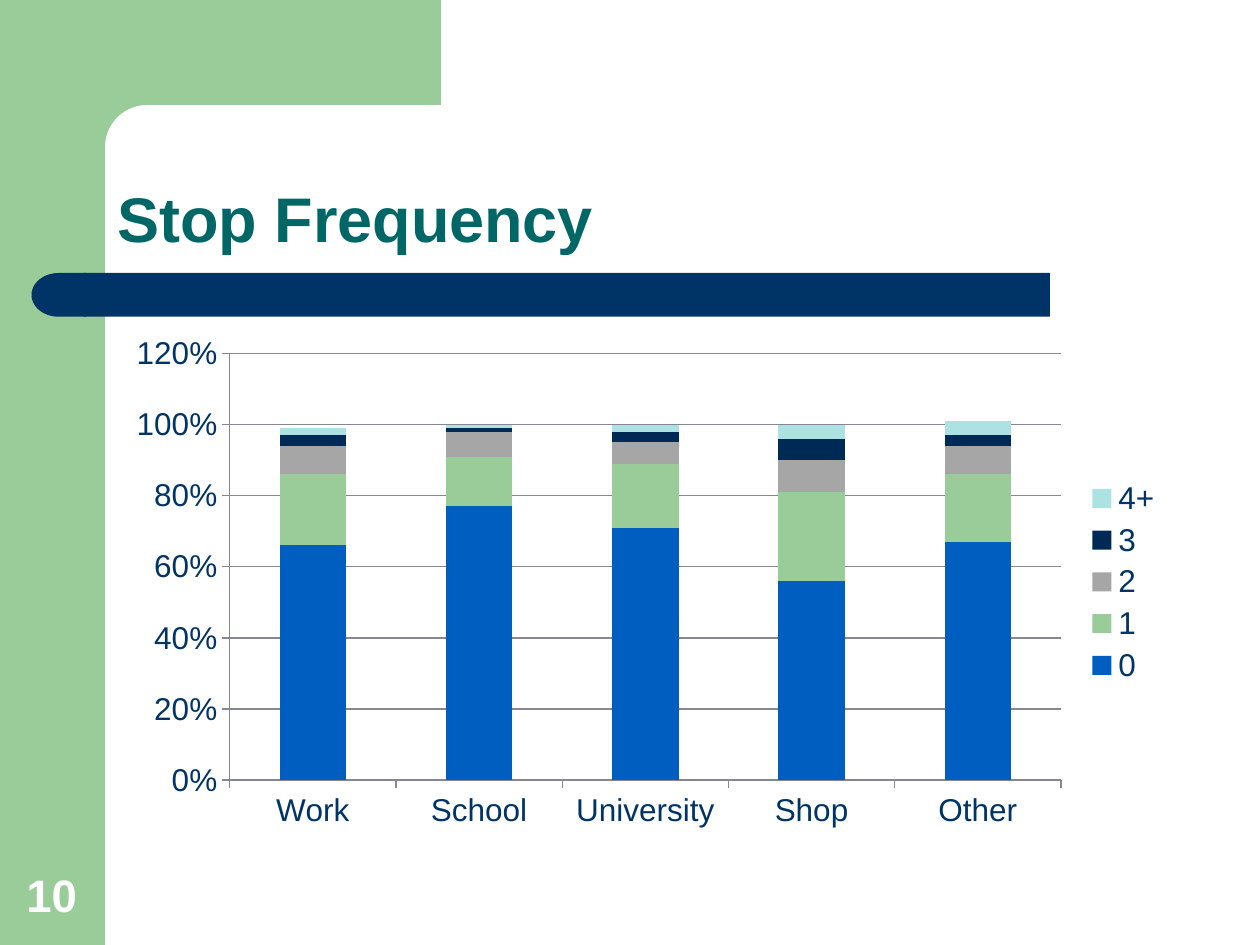
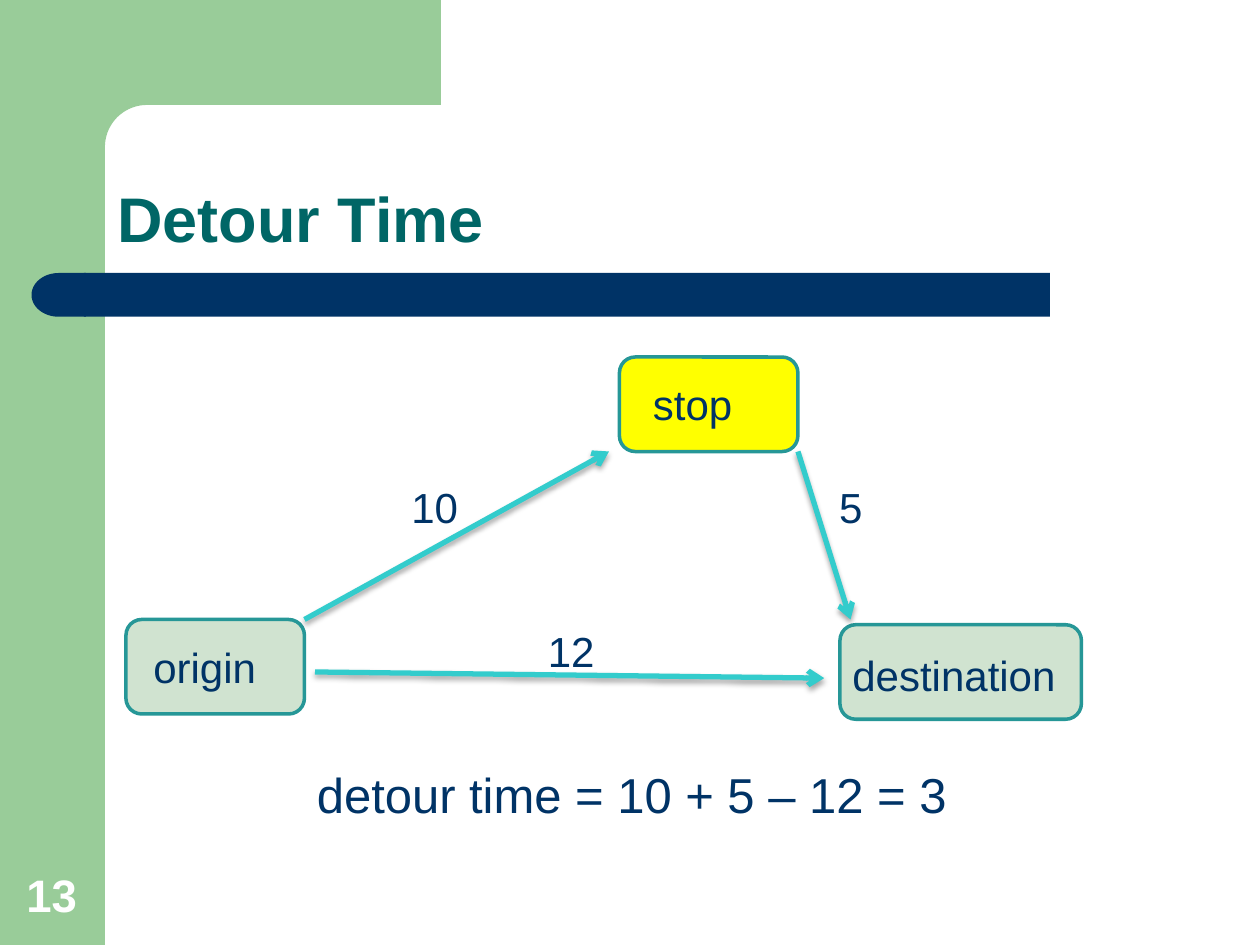
import math

import pptx
import pptx.chart.data
import pptx.dml.color
import pptx.enum.chart
import pptx.enum.shapes
import pptx.enum.text
import pptx.oxml
import pptx.oxml.ns
import pptx.util

Pt = pptx.util.Pt
SHAPE = pptx.enum.shapes.MSO_SHAPE
ALIGN = pptx.enum.text.PP_ALIGN
ANCHOR = pptx.enum.text.MSO_ANCHOR

FONT = "Arial"
COLORS = {
    "band": "99CC99", "bar": "003366", "title": "006666", "text": "003366",
    "number": "FFFFFF", "place": "D0E3D0", "stop": "FFFF00",
    "outline": "269797", "arrow": "33CCCC", "axis": "878794",
}

# Stop frequency: share of tours by number of stops
PURPOSES = ["Work", "School", "University", "Shop", "Other"]
STOP_SHARES = [
    ("0", "005EC0", (0.66, 0.77, 0.71, 0.56, 0.67)),
    ("1", "99CC99", (0.20, 0.14, 0.18, 0.25, 0.19)),
    ("2", "A6A6A6", (0.08, 0.07, 0.06, 0.09, 0.08)),
    ("3", "002A56", (0.03, 0.01, 0.03, 0.06, 0.03)),
    ("4+", "ADE2E2", (0.02, 0.01, 0.02, 0.04, 0.04)),
]

# Detour time: boxes are (left, top, width, height) in points
PLACES = [
    ("origin", "place", (72, 354, 102, 54), (80.5, 363, 84, 36)),
    ("destination", "place", (480, 357, 138, 54), (480, 367.5, 132, 36)),
    ("stop", "stop", (354, 204, 102, 54), (366, 213, 78, 36)),
]
# Travel time, start, end, label position
LEGS = [
    ("10", (174, 354), (348, 258), (228, 271.5)),
    ("5", (456, 258), (486, 354), (472.5, 271.5)),
    ("12", (180, 384), (471, 387.5), (306, 354)),
]
FORMULA = "detour time = 10 + 5 – 12 = 3"


def rgb(key):
    return pptx.dml.color.RGBColor.from_string(COLORS.get(key, key))


def points(box):
    return [Pt(length) for length in box]


def fill_plain(shape, color):
    shape.shadow.inherit = False
    shape.fill.solid()
    shape.fill.fore_color.rgb = rgb(color)
    shape.line.fill.background()


def add_block(slide, kind, box, color):
    block = slide.shapes.add_shape(kind, *points(box))
    fill_plain(block, color)
    return block


def add_text(slide, text, box, size, color="text", bold=False,
             align=ALIGN.LEFT, anchor=ANCHOR.TOP):
    frame = slide.shapes.add_textbox(*points(box)).text_frame
    frame.word_wrap = True
    frame.vertical_anchor = anchor
    paragraph = frame.paragraphs[0]
    paragraph.text = text
    paragraph.alignment = align
    paragraph.font.name = FONT
    paragraph.font.size = Pt(size)
    paragraph.font.bold = bold
    paragraph.font.color.rgb = rgb(color)
    return paragraph


def add_corner(slide):
    """Draw the top band with its rounded inner corner."""
    left, right, edge, radius = 36, 252, 60, 24
    center = edge + radius
    arc = []
    for step in range(19):
        angle = math.radians(90 + 5 * step)
        arc.append((Pt(center + radius * math.cos(angle)),
                    Pt(center - radius * math.sin(angle))))
    builder = slide.shapes.build_freeform(Pt(right), Pt(0))
    builder.add_line_segments(
        [(Pt(right), Pt(edge)), *arc, (Pt(edge), Pt(92)), (Pt(left), Pt(92)),
         (Pt(left), Pt(0))])
    fill_plain(builder.convert_to_shape(), "band")


def new_slide(deck, title, number):
    slide = deck.slides.add_slide(deck.slide_layouts[6])
    add_block(slide, SHAPE.RECTANGLE, (0, 0, 60, 540), "band")
    add_corner(slide)
    add_block(slide, SHAPE.RECTANGLE, (48, 156, 552, 25), "bar")
    cap = add_block(slide, SHAPE.FLOWCHART_DELAY, (18, 156, 31, 25), "bar")
    cap.rotation = 180
    heading = add_text(slide, title, (60, 60, 624, 90), 36, "title", True,
                       anchor=ANCHOR.BOTTOM)
    heading.line_spacing = 0.9
    add_text(slide, str(number), (6.5, 492, 46, 38), 26, "number", True,
             ALIGN.CENTER, ANCHOR.BOTTOM)
    return slide


def add_stop_chart(slide):
    shares = pptx.chart.data.CategoryChartData(number_format="0%")
    shares.categories = PURPOSES
    for stops, _, values in STOP_SHARES:
        shares.add_series(stops, values)
    chart = slide.shapes.add_chart(
        pptx.enum.chart.XL_CHART_TYPE.COLUMN_STACKED,
        *points((66, 186, 605.5, 293)), shares).chart
    chart.has_title = False
    chart.font.name = FONT
    chart.font.size = Pt(18)
    chart.font.color.rgb = rgb("text")
    chart.has_legend = True
    chart.legend.position = pptx.enum.chart.XL_LEGEND_POSITION.RIGHT
    chart.legend.include_in_layout = False

    plot = chart.plots[0]
    plot.gap_width = 150
    plot.overlap = 100
    plot.vary_by_categories = False
    for series, (_, color, _) in zip(plot.series, STOP_SHARES):
        series.format.fill.solid()
        series.format.fill.fore_color.rgb = rgb(color)

    share_axis = chart.value_axis
    share_axis.minimum_scale = 0
    share_axis.maximum_scale = 1.2
    share_axis.major_unit = 0.2
    share_axis.tick_labels.number_format = "0%"
    share_axis.tick_labels.number_format_is_linked = False
    share_axis.has_major_gridlines = True
    for axis in (share_axis, chart.category_axis):
        axis.major_tick_mark = pptx.enum.chart.XL_TICK_MARK.OUTSIDE
    for part in (share_axis, chart.category_axis, share_axis.major_gridlines):
        part.format.line.color.rgb = rgb("axis")
        part.format.line.width = Pt(0.75)


def add_arrow(slide, start, end):
    arrow = slide.shapes.add_connector(
        pptx.enum.shapes.MSO_CONNECTOR.STRAIGHT, *points(start + end))
    arrow.line.color.rgb = rgb("arrow")
    arrow.line.width = Pt(3)
    properties = arrow.element.spPr
    head = pptx.oxml.parse_xml(
        f'<a:tailEnd {pptx.oxml.ns.nsdecls("a")} type="arrow"/>')
    properties.find(pptx.oxml.ns.qn("a:ln")).append(head)
    properties.append(pptx.oxml.parse_xml(
        f'<a:effectLst {pptx.oxml.ns.nsdecls("a")}>'
        f'<a:outerShdw blurRad="{Pt(3.1)}" dist="{Pt(1.8)}" dir="5400000" rotWithShape="0">'
        '<a:srgbClr val="000000"><a:alpha val="35000"/></a:srgbClr>'
        '</a:outerShdw></a:effectLst>'))


def add_detour_diagram(slide):
    for _, color, box, _ in PLACES:
        place = add_block(slide, SHAPE.ROUNDED_RECTANGLE, box, color)
        place.line.color.rgb = rgb("outline")
        place.line.width = Pt(2)
    for _, start, end, _ in LEGS:
        add_arrow(slide, start, end)
    for name, _, _, label_box in PLACES:
        add_text(slide, name, label_box, 24)
    for minutes, _, _, corner in LEGS:
        add_text(slide, minutes, corner + (42, 36), 24)
    add_text(slide, FORMULA, (174, 433.5, 390, 41), 28)


def main():
    deck = pptx.Presentation()
    deck.slide_width, deck.slide_height = Pt(720), Pt(540)
    add_stop_chart(new_slide(deck, "Stop Frequency", 10))
    add_detour_diagram(new_slide(deck, "Detour Time", 13))
    deck.save("out.pptx")


if __name__ == "__main__":
    main()
